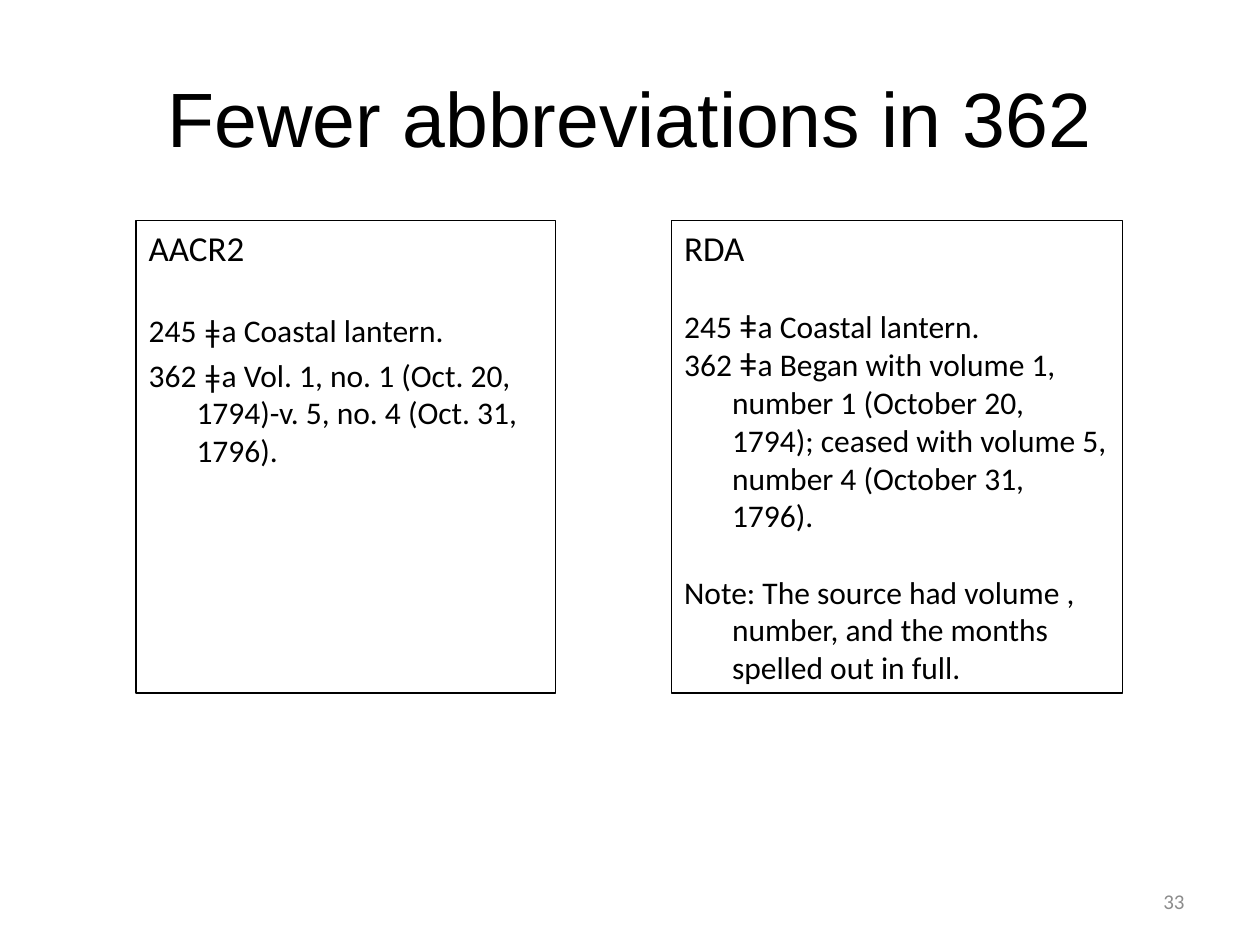
from dataclasses import dataclass

from lxml import etree
from pptx import Presentation
from pptx.dml.color import RGBColor
from pptx.enum.text import MSO_ANCHOR, MSO_AUTO_SIZE, PP_ALIGN
from pptx.oxml.ns import qn
from pptx.util import Inches, Pt

CENTER, RIGHT, LEFT = PP_ALIGN.CENTER, PP_ALIGN.RIGHT, PP_ALIGN.LEFT
TOP, MIDDLE = MSO_ANCHOR.TOP, MSO_ANCHOR.MIDDLE
NO_AUTOFIT = MSO_AUTO_SIZE.NONE
TWO_CONTENT_LAYOUT = 3
DELIMITER = "ǂ"


@dataclass(frozen=True)
class Theme:
    title_font: str = "Arial"
    body_font: str = "Calibri"
    ink: RGBColor = RGBColor(0, 0, 0)
    muted: RGBColor = RGBColor(0x8C, 0x8C, 0x8C)
    title_size: int = 44
    heading_size: int = 20
    body_size: int = 18
    number_size: int = 12
    border: float = 0.75
    hanging: float = 0.38


THEME = Theme()


def place(shape, box):
    shape.left, shape.top, shape.width, shape.height = map(Inches, box)


def prepare_frame(shape, anchor):
    frame = shape.text_frame
    frame.word_wrap = True
    frame.auto_size = NO_AUTOFIT
    frame.vertical_anchor = anchor
    return frame


def add_text(paragraph, text, *, size, font=THEME.body_font, color=THEME.ink,
             align=LEFT, before=0, delimiter_font=None):
    """Write text, giving the subfield delimiter its own font when one is named."""
    paragraph.alignment = align
    paragraph.space_before = Pt(before)
    head, delimiter, tail = text.partition(DELIMITER) if delimiter_font else (text, "", "")
    for part, face in ((head, font), (delimiter, delimiter_font), (tail, font)):
        if part:
            run = paragraph.add_run()
            run.text = part
            run.font.name = face
            run.font.size = Pt(size)
            run.font.color.rgb = color


def hang(paragraph):
    """Remove the bullet and indent every line but the first."""
    properties = paragraph._p.get_or_add_pPr()
    properties.set("marL", str(Inches(THEME.hanging)))
    properties.set("indent", str(-Inches(THEME.hanging)))
    etree.SubElement(properties, qn("a:buNone"))


def fill_title(shape, box, text):
    place(shape, box)
    frame = prepare_frame(shape, MIDDLE)
    add_text(frame.paragraphs[0], text, size=THEME.title_size,
             font=THEME.title_font, align=CENTER)


def fill_record(shape, box, heading, entries, delimiter_font=None):
    """Fill a bordered panel; entries are (text, space before) pairs."""
    place(shape, box)
    shape.line.color.rgb = THEME.ink
    shape.line.width = Pt(THEME.border)
    frame = prepare_frame(shape, TOP)
    add_text(frame.paragraphs[0], heading, size=THEME.heading_size)
    for text, before in entries:
        add_text(frame.add_paragraph(), text, size=THEME.body_size,
                 before=before, delimiter_font=delimiter_font)
    for paragraph in frame.paragraphs:
        hang(paragraph)


def add_slide_number(slide, box, number):
    shape = slide.shapes.add_textbox(*map(Inches, box))
    frame = prepare_frame(shape, MIDDLE)
    add_text(frame.paragraphs[0], number, size=THEME.number_size,
             color=THEME.muted, align=RIGHT)


def main():
    presentation = Presentation()
    presentation.slide_width, presentation.slide_height = Inches(10), Inches(7.5)
    slide = presentation.slides.add_slide(presentation.slide_layouts[TWO_CONTENT_LAYOUT])
    title, aacr2, rda = list(slide.placeholders)[:3]
    panel_top, panel_height = 1.75, 3.75

    fill_title(title, (0.5, 0.3, 9, 1.25), "Fewer abbreviations in 362")
    fill_record(aacr2, (1.08, panel_top, 3.33, panel_height), "AACR2", [
        ("245 ǂa Coastal lantern.", 24),
        ("362 ǂa Vol. 1, no. 1 (Oct. 20, 1794)-v. 5, no. 4 (Oct. 31, 1796).", 4),
    ])
    fill_record(rda, (5.33, panel_top, 3.58, panel_height), "RDA", [
        ("245 ǂa Coastal lantern.", 22),
        ("362 ǂa Began with volume 1, number 1 (October 20, 1794); "
         "ceased with volume 5, number 4 (October 31, 1796).", 0),
        ("Note: The source had volume , number, and the months spelled out in full.", 22),
    ], delimiter_font=THEME.title_font)
    add_slide_number(slide, (7.17, 6.95, 2.33, 0.4), "33")
    presentation.save("out.pptx")


if __name__ == "__main__":
    main()
